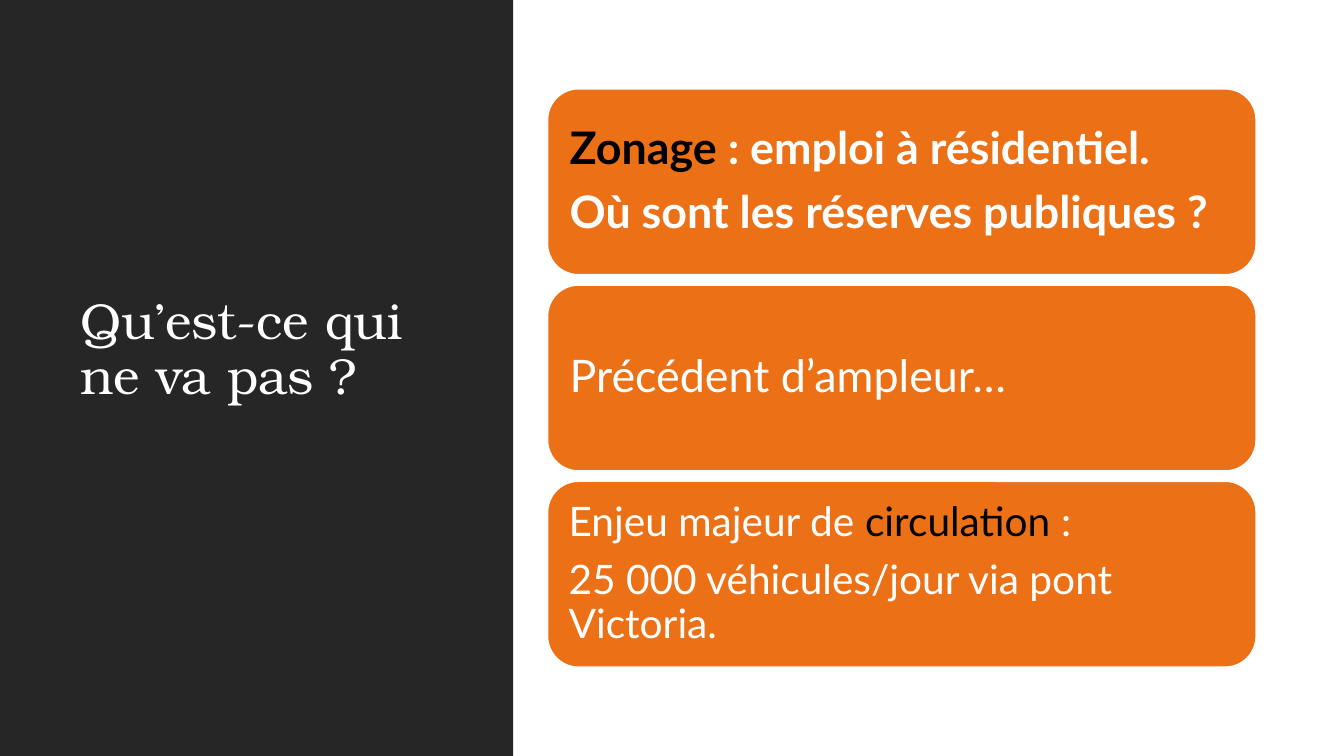
from pptx import Presentation
from pptx.dml.color import RGBColor
from pptx.enum.shapes import MSO_SHAPE as Shape
from pptx.enum.text import MSO_ANCHOR as Anchor, PP_ALIGN as Align
from pptx.util import Inches, Pt

COLORS = {"panel": "262626", "card": "EC7016", "white": "FFFFFF", "black": "000000"}
TITLE_FONT = "TeX Gyre Bonum"
BODY_FONT = "Lato"

CARDS = [
    (32, True, 0.13, [[("Zonage ", "black"), (": emploi à résidentiel.", "white")],
                      [("Où sont les réserves publiques ?", "white")]]),
    (32, False, 0.13, [[("Précédent d’ampleur…", "white")]]),
    (29, False, 0.12, [[("Enjeu majeur de ", "white"), ("circulation", "black"), (" :", "white")],
                       [("25 000 véhicules/jour via pont Victoria.", "white")]]),
]


def color(name):
    """Return the named palette colour."""
    return RGBColor.from_string(COLORS[name])


def write_text(shape, paragraphs, *, font, size, bold=False, anchor=Anchor.MIDDLE,
               insets=(0.1, 0.05), space=0):
    """Fill a shape with paragraphs made of (text, colour) runs."""
    frame = shape.text_frame
    frame.word_wrap = True
    frame.vertical_anchor = anchor
    frame.margin_left = frame.margin_right = Inches(insets[0])
    frame.margin_top = frame.margin_bottom = Inches(insets[1])
    for index, runs in enumerate(paragraphs):
        paragraph = frame.add_paragraph() if index else frame.paragraphs[0]
        paragraph.alignment = Align.LEFT
        paragraph.line_spacing = 0.9
        if index:
            paragraph.space_before = Pt(space)
        for text, color_name in runs:
            run = paragraph.add_run()
            run.text = text
            run.font.name = font
            run.font.size = Pt(size)
            run.font.bold = bold
            run.font.color.rgb = color(color_name)


def add_block(slide, kind, box, fill):
    """Add a flat filled shape without outline or shadow."""
    shape = slide.shapes.add_shape(kind, *map(Inches, box))
    shape.shadow.inherit = False
    shape.fill.solid()
    shape.fill.fore_color.rgb = color(fill)
    shape.line.fill.background()
    return shape


def add_title_panel(slide, left, top, width, height):
    """Draw the dark side panel with the slide title."""
    add_block(slide, Shape.RECTANGLE, (left, top, width, height), "panel")
    title = slide.shapes.add_textbox(Inches(left + 0.7), Inches(top + 1.78),
                                     Inches(width - 1.24), Inches(2.29))
    write_text(title, [[("Qu’est-ce qui ne va pas ?", "white")]],
               font=TITLE_FONT, size=36, anchor=Anchor.BOTTOM)


def add_cards(slide, left, top, width, height, gap=0.1):
    """Stack the rounded cards evenly in the given box."""
    card_height = (height - gap * (len(CARDS) - 1)) / len(CARDS)
    for index, (size, bold, inset, paragraphs) in enumerate(CARDS):
        card_top = top + index * (card_height + gap)
        card = add_block(slide, Shape.ROUNDED_RECTANGLE,
                         (left, card_top, width, card_height), "card")
        card.line.color.rgb = color("white")
        card.line.width = Pt(1.25)
        write_text(card, paragraphs, font=BODY_FONT, size=size, bold=bold,
                   insets=(inset, inset), space=size * 0.35)


def main():
    """Build the slide and save it."""
    presentation = Presentation()
    presentation.slide_width = Inches(13.33)
    presentation.slide_height = Inches(7.5)
    slide = presentation.slides.add_slide(presentation.slide_layouts[6])
    add_title_panel(slide, 0, 0, 5.09, 7.5)
    add_cards(slide, 5.43, 0.88, 7.03, 5.74)
    presentation.save("out.pptx")


if __name__ == "__main__":
    main()
